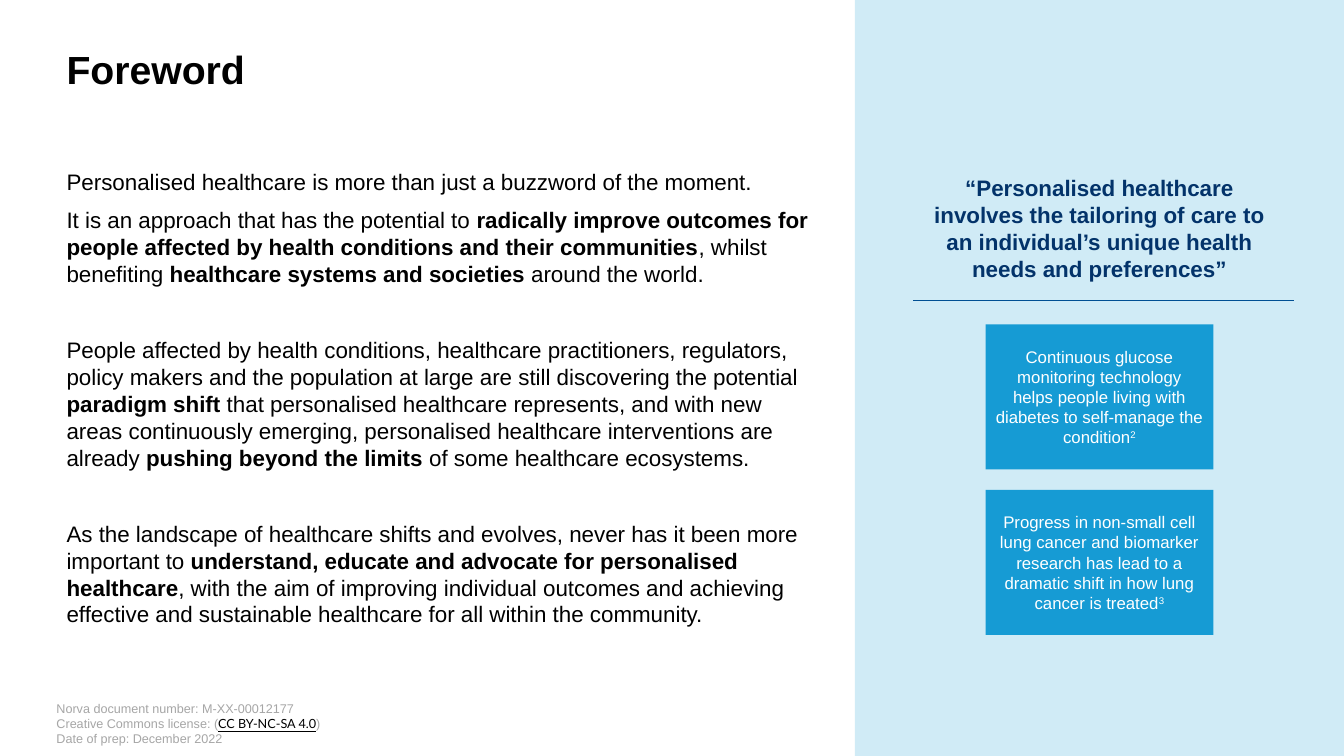
from lxml import etree
from pptx import Presentation, util as u
from pptx.dml.color import RGBColor
from pptx.enum import shapes, text
from pptx.oxml.ns import qn

# Content: each paragraph is a list of (words, style) runs
TITLE = "Foreword"
BODY = [
    [("Personalised healthcare is more than just a buzzword of the moment.", "")],
    [("It is an approach that has the potential to ", ""),
     ("radically improve outcomes for people affected by health conditions "
      "and their communities", "bold"),
     (", whilst benefiting ", ""),
     ("healthcare systems and societies ", "bold"),
     ("around the world.", "")],
    [("People affected by health conditions, healthcare practitioners, regulators, "
      "policy makers and the population at large are still discovering the potential ", ""),
     ("paradigm shift ", "bold"),
     ("that personalised healthcare represents, and with new areas continuously "
      "emerging, personalised healthcare interventions are already ", ""),
     ("pushing beyond the limits ", "bold"),
     ("of some healthcare ecosystems.", "")],
    [("As the landscape of healthcare shifts and evolves, never has it been more "
      "important to ", ""),
     ("understand, educate and advocate for personalised healthcare", "bold"),
     (", with the aim of improving individual outcomes and achieving effective and "
      "sustainable healthcare for all within the community.", "")],
]
GAPS = [0, 8, 35.2, 35.2]  # points before each body paragraph
QUOTE = [[("“Personalised healthcare involves the tailoring of care to an "
           "individual’s unique health needs and preferences”", "bold")]]
CARDS = [
    [[("Continuous glucose monitoring technology helps people living with "
       "diabetes to self-manage the condition", ""), ("2", "sup")]],
    [[("Progress in non-small cell lung cancer and biomarker research has lead "
       "to a dramatic shift in how lung cancer is treated", ""), ("3", "sup")]],
]
FOOT = [
    [("Norva document number: M-XX-00012177", "")],
    [("Creative Commons license: (", ""), ("CC BY-NC-SA 4.0", "link"), (")", "")],
    [("Date of prep: December 2022", "")],
]

THEME = {
    "font": "Arial", "link font": "Lato",
    "ink": "000000", "grey": "A6A6A6", "navy": "03336A", "rule": "004F93",
    "blue": "169BD4", "white": "FFFFFF",
    "title": 28, "body": 16, "card": 12, "foot": 9,
}

deck = Presentation()
deck.slide_width, deck.slide_height = u.Inches(13.33), u.Inches(7.5)
slide = deck.slides.add_slide(deck.slide_layouts[1])


def color(name):
    return RGBColor.from_string(THEME[name])


def area(left, top, wide, high):
    """Turn percentages of the slide into lengths."""
    return [int(deck.slide_width * left / 100), int(deck.slide_height * top / 100),
            int(deck.slide_width * wide / 100), int(deck.slide_height * high / 100)]


def move(item, box):
    item.left, item.top, item.width, item.height = box


def write(item, paras, size, ink, align=text.PP_ALIGN.LEFT,
          anchor=text.MSO_ANCHOR.TOP, gaps=()):
    frame = item.text_frame
    frame.word_wrap, frame.auto_size = True, text.MSO_AUTO_SIZE.NONE
    frame.vertical_anchor = anchor
    for i, runs in enumerate(paras):
        para = frame.paragraphs[0] if i == 0 else frame.add_paragraph()
        para.alignment = align
        para.space_before = u.Pt(gaps[i] if gaps else 0)
        for words, style in runs:
            run = para.add_run()
            run.text = words
            font, link = run.font, style == "link"
            font.name = THEME["link font" if link else "font"]
            font.size = u.Pt(THEME[size])
            font.color.rgb = color("ink" if link else ink)
            font.bold, font.underline = style == "bold", link
            if style == "sup":
                run._r.get_or_add_rPr().set("baseline", "30000")


def block(box, fill):
    item = slide.shapes.add_shape(shapes.MSO_SHAPE.RECTANGLE, *box)
    item.shadow.inherit = False
    item.fill.solid()
    item.fill.fore_color.rgb = color(fill)
    item.line.fill.background()
    return item


# Title and body
EDGE = 4.2
title, body = slide.placeholders[0], slide.placeholders[1]
move(title, area(EDGE, 5.33, 88.9, 15.07))
write(title, [[(TITLE, "bold")]], "title", "ink")
move(body, area(EDGE, 21.6, 57.3, 64.13))
write(body, BODY, "body", "ink", gaps=GAPS)
for para in body.text_frame.paragraphs:
    props = para._p.get_or_add_pPr()
    props.set("marL", "0")
    props.set("indent", "0")
    etree.SubElement(props, qn("a:buNone"))

# Side panel, tinted by transparency
SIDE = 63.6
MID = (SIDE + 100) / 2
panel = block(area(SIDE, 0, 100 - SIDE, 100), "blue")
tint = panel._element.spPr.find(".//" + qn("a:srgbClr"))
etree.SubElement(tint, qn("a:alpha")).set("val", "20000")

# Quote and rule
WIDE = 27.9
quote = slide.shapes.add_textbox(*area(MID - WIDE / 2, 22.4, WIDE, 15.73))
write(quote, QUOTE, "body", "navy", text.PP_ALIGN.CENTER)
x, y, span, _ = area(67.95, 39.75, 28.35, 0)
rule = slide.shapes.add_connector(shapes.MSO_CONNECTOR.STRAIGHT, x, y, x + span, y)
rule.line.color.rgb, rule.line.width = color("rule"), u.Pt(0.75)
etree.SubElement(rule._element.spPr, qn("a:effectLst"))

# Cards, stacked at an even step
CARD_W, CARD_H, FIRST, STEP = 16.95, 19.2, 42.9, 21.9
for i, paras in enumerate(CARDS):
    card = block(area(MID - CARD_W / 2, FIRST + i * STEP, CARD_W, CARD_H), "blue")
    write(card, paras, "card", "white", text.PP_ALIGN.CENTER, text.MSO_ANCHOR.MIDDLE)

# Footer
foot = slide.shapes.add_textbox(*area(EDGE, 92.67, 23, 6))
frame = foot.text_frame
frame.margin_left = frame.margin_top = frame.margin_right = frame.margin_bottom = 0
write(foot, FOOT, "foot", "grey", anchor=text.MSO_ANCHOR.BOTTOM)

deck.save("out.pptx")
